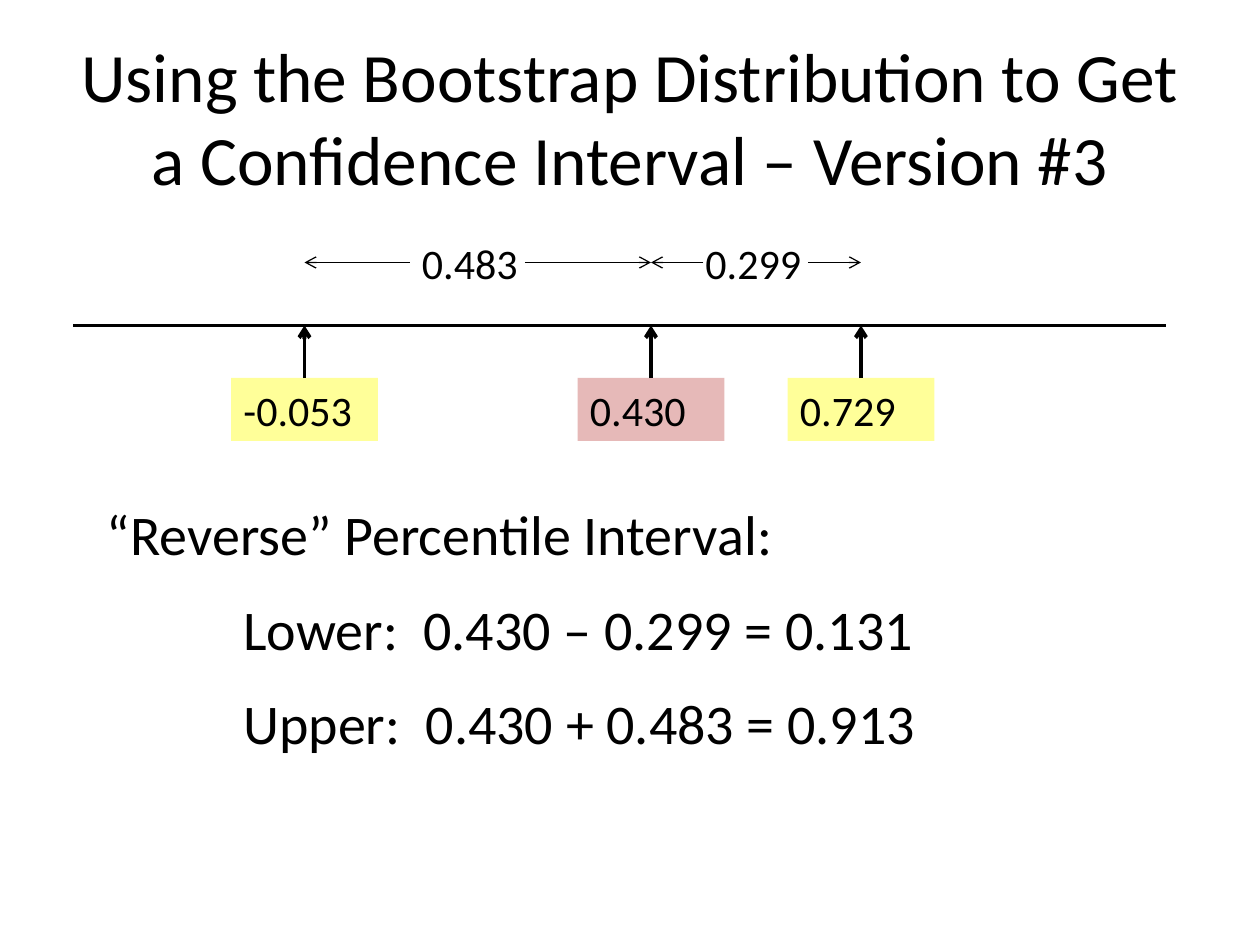
from lxml import etree
from pptx import Presentation
from pptx.dml.color import RGBColor
from pptx.enum import shapes, text
from pptx.oxml.ns import qn
from pptx.util import Pt


def color(code):
    return RGBColor.from_string(code)


def write(shape, words, size=24, ink="000000", font="Calibri",
          align=text.PP_ALIGN.LEFT, anchor=text.MSO_ANCHOR.TOP):
    frame = shape.text_frame
    frame.word_wrap = True
    frame.vertical_anchor = anchor
    para = frame.paragraphs[0]
    para.alignment = align
    run = para.add_run()
    run.text = words
    run.font.size = Pt(size)
    run.font.name = font
    run.font.color.rgb = color(ink)


class Board:
    ink = "000000"

    def __init__(self, slide):
        self.shapes = slide.shapes

    def label(self, words, x, y, w, h, **style):
        box = self.shapes.add_textbox(Pt(x), Pt(y), Pt(w), Pt(h))
        write(box, words, ink=self.ink, **style)

    def block(self, words, x, y, w, h, fill):
        box = self.shapes.add_shape(shapes.MSO_SHAPE.RECTANGLE,
                                    Pt(x), Pt(y), Pt(w), Pt(h))
        box.shadow.inherit = False
        box.fill.solid()
        box.fill.fore_color.rgb = color(fill)
        box.line.fill.background()
        write(box, words, ink=self.ink)

    def line(self, x1, y1, x2, y2, width, arrow=True):
        line = self.shapes.add_connector(shapes.MSO_CONNECTOR.STRAIGHT,
                                         Pt(x1), Pt(y1), Pt(x2), Pt(y2))
        line.line.width = Pt(width)
        line.line.color.rgb = color(self.ink)
        if arrow:
            etree.SubElement(line.line._get_or_add_ln(), qn("a:tailEnd"), type="arrow")
        etree.SubElement(line._element.spPr, qn("a:effectLst"))


def main():
    deck = Presentation()
    deck.slide_width, deck.slide_height = Pt(720), Pt(540)
    board = Board(deck.slides.add_slide(deck.slide_layouts[6]))

    # Title
    board.label("Using the Bootstrap Distribution to Get a Confidence Interval – Version #3",
                36, 21.6, 648, 90, size=39.6, align=text.PP_ALIGN.CENTER,
                anchor=text.MSO_ANCHOR.MIDDLE)

    # Values below the number line, each with an arrow up to it
    axis, top, wide, high = 186, 216, 84, 36
    low, mid, upper = 174, 372, 492
    for words, x, fill in (("-0.053", low, "FFFF99"),
                           ("0.430", mid, "E6B9B8"),
                           ("0.729", upper, "FFFF99")):
        board.block(words, x - wide / 2, top, wide, high, fill)
        board.line(x, top, x, axis, 2.25)
    board.line(42, axis, 666, axis, 1.5, arrow=False)

    # Distances above the number line, with arrows out to both ends
    level = 150
    for words, x, left, right, start, end in (
            ("0.483", 234, 234, 300, low, mid),
            ("0.299", 396, 402, 462, mid, upper)):
        board.label(words, x, level - high / 2, wide, high)
        board.line(left, level, start, level, 0.75)
        board.line(right, level, end, level, 0.75)

    # Interval results
    for row, (words, x, w) in enumerate((
            ("“Reverse” Percentile Interval:", 54, 420),
            ("Lower:  0.430 – 0.299 = 0.131", 132, 402),
            ("Upper:  0.430 + 0.483 = 0.913", 132, 402))):
        board.label(words, x, 282 + 54 * row, w, 46, size=32)

    deck.save("out.pptx")


if __name__ == "__main__":
    main()
